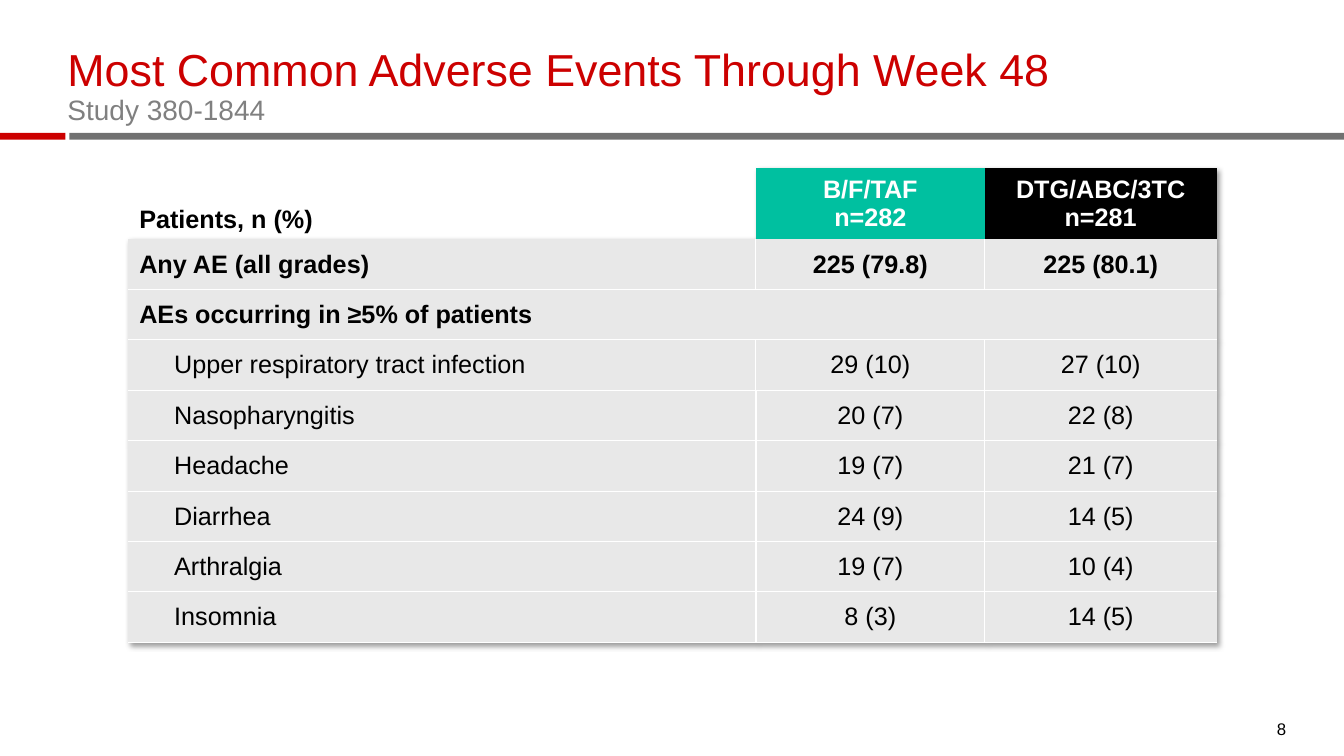
import pptx
import pptx.dml.color
import pptx.enum.shapes
import pptx.enum.text
import pptx.oxml
import pptx.oxml.ns
import pptx.util

Cm = pptx.util.Cm
Pt = pptx.util.Pt
ALIGN = pptx.enum.text.PP_ALIGN
ANCHOR = pptx.enum.text.MSO_ANCHOR
NS = pptx.oxml.ns.nsdecls("a")

COLORS = {
    "red": "CC0000",
    "rule": "717171",
    "subtitle": "808080",
    "teal": "00C0A0",
    "row": "E8E8E8",
    "black": "000000",
    "white": "FFFFFF",
}
COLUMNS = [15.82, 5.77, 5.84]
HEADER_HEIGHT, ROW_HEIGHT = 1.69, 1.27
HEADER = ["Patients, n (%)", "B/F/TAF\nn=282", "DTG/ABC/3TC\nn=281"]
HEADER_FILLS = [None, "teal", "black"]
SUMMARY = ["Any AE (all grades)", "225 (79.8)", "225 (80.1)"]
SECTION = ["AEs occurring in ≥5% of patients", "", ""]
EVENTS = [
    ["Upper respiratory tract infection", "29 (10)", "27 (10)"],
    ["Nasopharyngitis", "20 (7)", "22 (8)"],
    ["Headache", "19 (7)", "21 (7)"],
    ["Diarrhea", "24 (9)", "14 (5)"],
    ["Arthralgia", "19 (7)", "10 (4)"],
    ["Insomnia", "8 (3)", "14 (5)"],
]


class SlideBuilder:
    def __init__(self, slide, font="Arial"):
        self.slide = slide
        self.font = font

    def color(self, name):
        return pptx.dml.color.RGBColor.from_string(COLORS[name])

    def style(self, p, size, color, bold=False, align=ALIGN.LEFT):
        p.alignment = align
        p.font.name = self.font
        p.font.size = Pt(size)
        p.font.bold = bold
        p.font.color.rgb = self.color(color)

    def bar(self, x, y, w, h, color):
        sp = self.slide.shapes.add_shape(
            pptx.enum.shapes.MSO_SHAPE.RECTANGLE, Cm(x), Cm(y), Cm(w), Cm(h))
        sp.shadow.inherit = False
        sp.fill.solid()
        sp.fill.fore_color.rgb = self.color(color)
        sp.line.fill.background()

    def text(self, x, y, w, h, lines, spacing=1.0):
        tf = self.slide.shapes.add_textbox(Cm(x), Cm(y), Cm(w), Cm(h)).text_frame
        tf.word_wrap = True
        tf.vertical_anchor = ANCHOR.BOTTOM
        tf.margin_left = tf.margin_right = tf.margin_top = tf.margin_bottom = 0
        tf.text = "\n".join(line[0] for line in lines)
        for p, (_, size, color) in zip(tf.paragraphs, lines):
            self.style(p, size, color)
            p.line_spacing = spacing

    def table(self, x, y, columns, rows):
        heights = [HEADER_HEIGHT] + [ROW_HEIGHT] * (len(rows) - 1)
        table = self.slide.shapes.add_table(
            len(rows), len(columns), Cm(x), Cm(y),
            Cm(sum(columns)), Cm(sum(heights))).table
        table.first_row = table.horz_banding = False
        tblPr = table._tbl.tblPr
        tblPr[0].text = "{2D5ABB26-0587-4C30-8999-92F81FD0307C}"
        tblPr.insert(0, pptx.oxml.parse_xml(
            f'<a:effectLst {NS}><a:outerShdw blurRad="50800" dist="38100" '
            'dir="2700000" algn="tl" rotWithShape="0"><a:srgbClr val="000000">'
            '<a:alpha val="40000"/></a:srgbClr></a:outerShdw></a:effectLst>'))
        for column, width in zip(table.columns, columns):
            column.width = Cm(width)
        for row, height in zip(table.rows, heights):
            row.height = Cm(height)
        return table

    def cell(self, cell, text, fill, color="black", bold=False, align=ALIGN.LEFT,
             anchor=ANCHOR.MIDDLE, margins=(0.28, 0.08), indent=0):
        cell.text = text
        cell.vertical_anchor = anchor
        cell.margin_left = Cm(margins[0] + indent)
        cell.margin_right = Cm(margins[0])
        cell.margin_top = cell.margin_bottom = Cm(margins[1])
        for p in cell.text_frame.paragraphs:
            self.style(p, 18, color, bold, align)
        if fill:
            cell.fill.solid()
            cell.fill.fore_color.rgb = self.color(fill)
        else:
            cell.fill.background()

    def borders(self, cell, sides, width):
        tcPr = cell._tc.get_or_add_tcPr()
        for i, side in enumerate(sides):
            tcPr.insert(i, pptx.oxml.parse_xml(
                f'<a:ln{side} {NS} w="{Pt(width)}"><a:solidFill>'
                f'<a:srgbClr val="{COLORS["white"]}"/></a:solidFill></a:ln{side}>'))


def main():
    prs = pptx.Presentation()
    prs.slide_width, prs.slide_height = Cm(33.87), Cm(19.05)
    s = SlideBuilder(prs.slides.add_slide(prs.slide_layouts[6]))

    s.bar(1.75, 3.35, 32.12, 0.17, "rule")
    s.bar(0, 3.35, 1.65, 0.17, "red")
    s.text(1.7, 1.3, 30.48, 1.88, [
        ("Most Common Adverse Events Through Week 48", 32, "red"),
        ("Study 380-1844", 20, "subtitle"),
    ], spacing=0.9)

    rows = [HEADER, SUMMARY, SECTION] + EVENTS
    table = s.table(3.23, 4.24, COLUMNS, rows)
    table.cell(2, 0).merge(table.cell(2, 2))
    for i, row in enumerate(rows):
        for j, text in enumerate(row):
            cell = table.cell(i, j)
            if cell.is_spanned:
                continue
            align = ALIGN.CENTER if j else ALIGN.LEFT
            if i == 0:
                s.cell(cell, text, HEADER_FILLS[j], "white" if j else "black", True,
                       align, ANCHOR.MIDDLE if j else ANCHOR.BOTTOM,
                       (0.38 if j else 0.28, 0.13))
                continue
            is_event = row in EVENTS
            s.cell(cell, text, "row", bold=not is_event, align=align,
                   indent=0.88 if is_event and j == 0 else 0)
            sides = [side for side, shown in (
                ("L", j > 0), ("R", j < 2 and row is not SECTION),
                ("T", i > 1), ("B", True)) if shown]
            s.borders(cell, sides, 1 if i > 3 else 0.75)

    s.text(32.18, 18.16, 0.91, 0.46, [("8", 12, "black")])
    prs.save("out.pptx")


if __name__ == "__main__":
    main()
